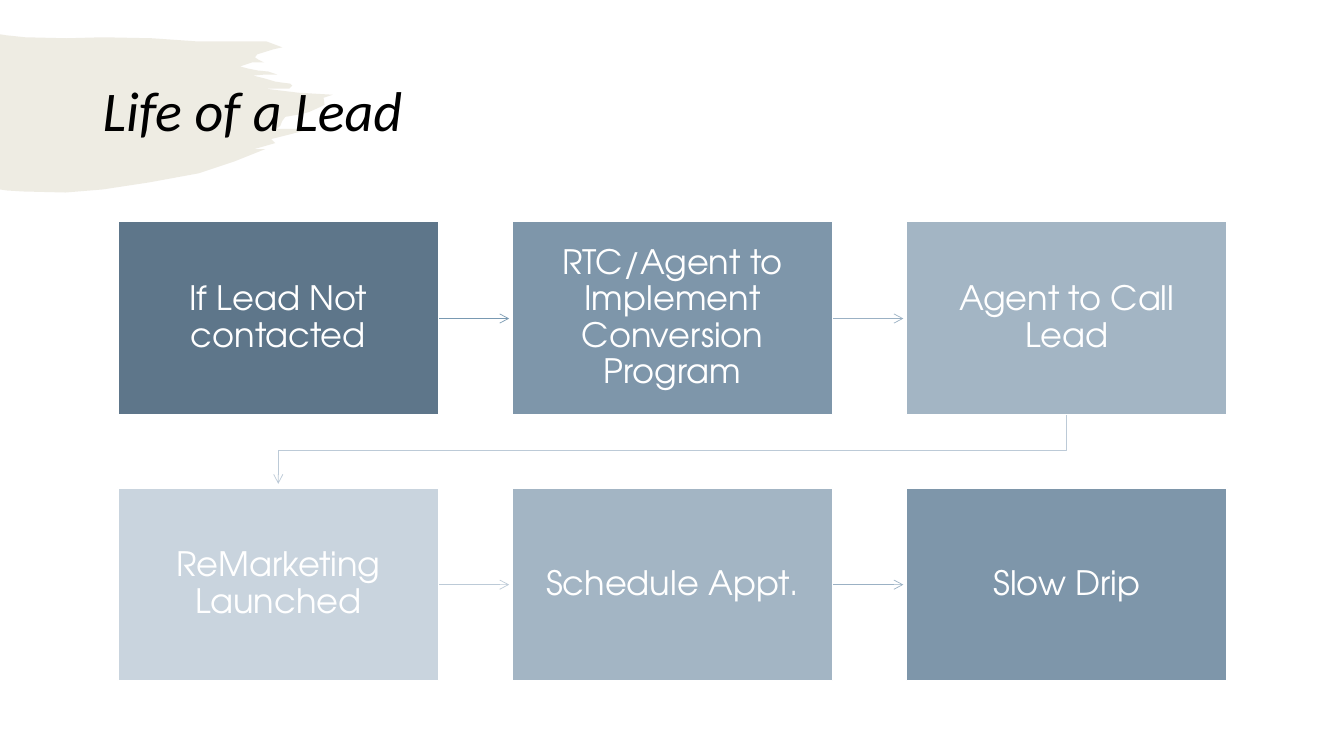
import dataclasses

import lxml.etree
import pptx
import pptx.dml.color
import pptx.enum.shapes
import pptx.enum.text
import pptx.oxml.ns
import pptx.util

PX = 9144  # EMU per px, 100 px to the inch
WIDE, HIGH = 318, 191
LEFT, TOP = 117, 220
STEP, DROP = 391, 264
GAP = 70

HUES = {
    "white": "FFFFFF", "black": "000000", "brush": "AEA077",
    "deep": "5E768A", "mid": "7E96AA", "soft": "A3B5C4", "pale": "C9D4DE",
    "line1": "7999B2", "line2": "9BB1C4", "line3": "BCCAD7",
}

BRUSH = [
    (0, 34), (6, 35), (25, 37), (66, 38), (102, 37), (151, 38), (194, 41),
    (248, 41), (264, 41), (280, 47), (271, 49), (255, 54), (253, 57),
    (256, 59), (262, 62), (250, 62), (238, 66), (246, 68), (256, 70),
    (266, 71), (275, 74), (263, 74), (251, 75), (263, 78), (273, 81),
    (280, 82), (288, 83), (290, 85), (287, 88), (284, 88), (263, 88),
    (296, 92), (330, 94), (321, 97), (322, 104), (318, 106), (307, 111),
    (300, 113), (283, 116), (280, 120), (278, 125), (274, 128), (308, 128),
    (289, 133), (269, 138), (273, 142), (252, 148), (263, 148), (233, 160),
    (197, 172), (148, 181), (102, 188), (65, 191), (23, 190), (7, 189),
    (0, 188),
]


@dataclasses.dataclass
class Step:
    text: str
    fill: str
    line: str = ""  # colour of the arrow to the next step


STEPS = [
    Step("If Lead Not contacted", "deep", "line1"),
    Step("RTC/Agent to Implement Conversion Program", "mid", "line2"),
    Step("Agent to Call Lead", "soft", "line3"),
    Step("ReMarketing Launched", "pale", "line3"),
    Step("Schedule Appt.", "soft", "line2"),
    Step("Slow Drip", "mid"),
]


def px(num: int) -> pptx.util.Emu:
    return pptx.util.Emu(num * PX)


def hue(name: str) -> pptx.dml.color.RGBColor:
    return pptx.dml.color.RGBColor.from_string(HUES[name])


def sub(node, tag: str, **attrs: str):
    return lxml.etree.SubElement(node, pptx.oxml.ns.qn(tag), **attrs)


def trace(shapes, pts: list, close: bool):
    pen = shapes.build_freeform(*pts[0], scale=PX)
    pen.add_line_segments(pts[1:], close=close)
    shape = pen.convert_to_shape()
    shape.shadow.inherit = False
    return shape


def write(shape, text: str, face: str, size: int, color: str):
    frame = shape.text_frame
    frame.word_wrap = True
    frame.vertical_anchor = pptx.enum.text.MSO_ANCHOR.MIDDLE
    para = frame.paragraphs[0]
    para.line_spacing = 0.9
    run = para.add_run()
    run.text = text
    run.font.name = face
    run.font.size = pptx.util.Pt(size)
    run.font.color.rgb = hue(color)
    return para


def point(shape, color: str) -> None:
    shape.line.color.rgb = hue(color)
    shape.line.width = pptx.util.Pt(0.5)
    sub(shape.line._get_or_add_ln(), "a:tailEnd", type="arrow")


def box(shapes, step: Step, left: int, top: int) -> None:
    kind = pptx.enum.shapes.MSO_SHAPE.RECTANGLE
    shape = shapes.add_shape(kind, px(left), px(top), px(WIDE), px(HIGH))
    shape.shadow.inherit = False
    shape.fill.solid()
    shape.fill.fore_color.rgb = hue(step.fill)
    shape.line.color.rgb = hue("white")
    shape.line.width = pptx.util.Pt(1)
    frame = shape.text_frame
    frame.margin_left = frame.margin_right = px(19)
    frame.margin_top = frame.margin_bottom = px(19)
    para = write(shape, step.text, "TeX Gyre Adventor", 24, "white")
    para.alignment = pptx.enum.text.PP_ALIGN.CENTER


def arrow(shapes, step: Step, left: int, top: int) -> None:
    start, mid = left + WIDE, top + HIGH // 2 + 1
    kind = pptx.enum.shapes.MSO_CONNECTOR.STRAIGHT
    line = shapes.add_connector(kind, px(start), px(mid), px(start + GAP), px(mid))
    point(line, step.line)
    sub(line._element.spPr, "a:effectLst")


def turn(shapes, step: Step, left: int, top: int) -> None:
    start, end = left + WIDE // 2, LEFT + WIDE // 2
    foot, bend = top + HIGH, top + HIGH + 36
    pts = [(start, foot), (start, bend), (end, bend), (end, foot + GAP - 1)]
    line = trace(shapes, pts, False)
    line.fill.background()
    point(line, step.line)


def main() -> None:
    deck = pptx.Presentation()
    deck.slide_width, deck.slide_height = px(1333), px(750)
    shapes = deck.slides.add_slide(deck.slide_layouts[6]).shapes

    # Brush stroke behind the title
    brush = trace(shapes, BRUSH, True)
    brush.fill.solid()
    brush.fill.fore_color.rgb = hue("brush")
    brush.line.fill.background()
    tint = brush._element.spPr.find(".//" + pptx.oxml.ns.qn("a:srgbClr"))
    sub(tint, "a:alpha", val="20000")

    # Title
    title = shapes.add_textbox(px(92), px(40), px(1150), px(145))
    para = write(title, "Life of a Lead", "Calibri", 40, "black")
    para.runs[0].font.italic = True

    # Steps in two rows of three, each with its arrow
    for num, step in enumerate(STEPS):
        row, col = divmod(num, 3)
        left, top = LEFT + col * STEP, TOP + row * DROP
        if step.line:
            link = turn if col == 2 else arrow
            link(shapes, step, left, top)
        box(shapes, step, left, top)

    deck.save("out.pptx")


if __name__ == "__main__":
    main()
